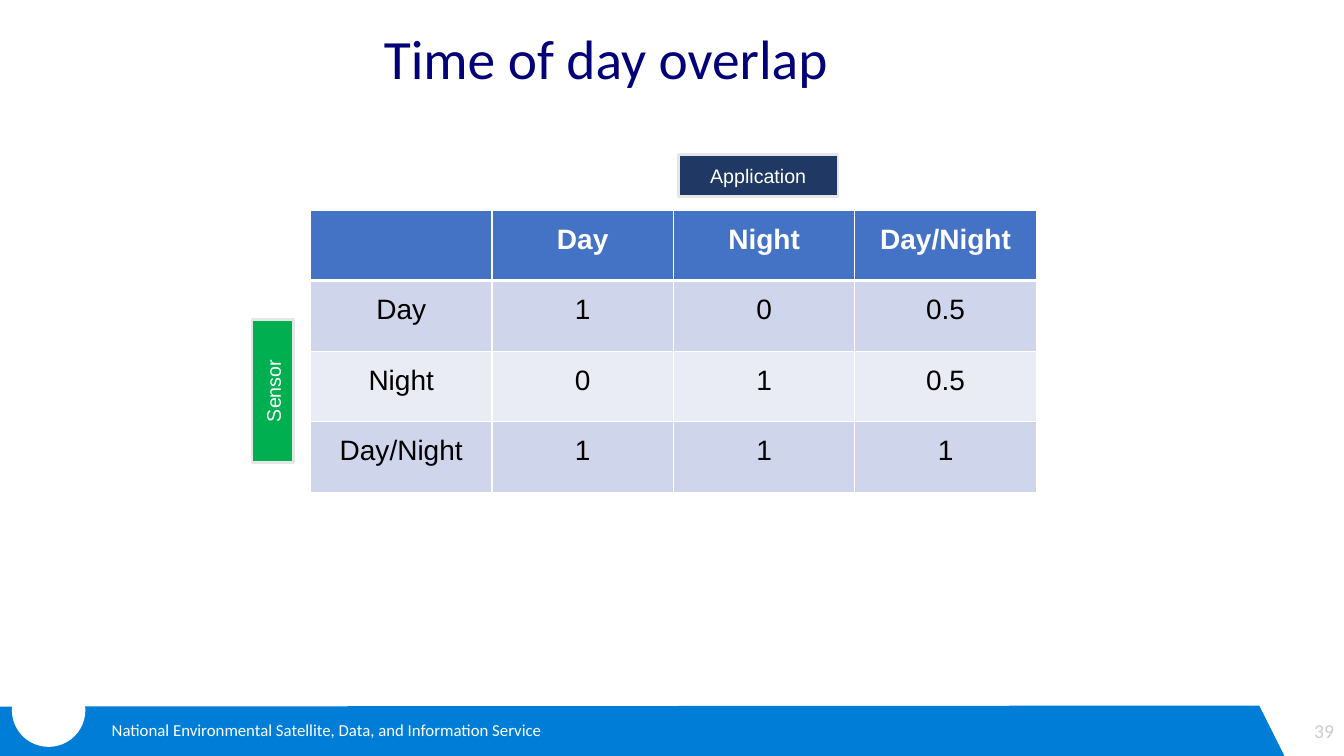
from pptx import Presentation
from pptx.dml.color import RGBColor
from pptx.enum.shapes import MSO_SHAPE
from pptx.enum.text import MSO_ANCHOR, PP_ALIGN
from pptx.oxml import parse_xml
from pptx.oxml.ns import nsdecls
from pptx.util import Pt

LEFT, CENTER, RIGHT = PP_ALIGN.LEFT, PP_ALIGN.CENTER, PP_ALIGN.RIGHT
TOP, MIDDLE = MSO_ANCHOR.TOP, MSO_ANCHOR.MIDDLE
RECT, OVAL = MSO_SHAPE.RECTANGLE, MSO_SHAPE.OVAL

COLORS = {
    "white": "FFFFFF", "black": "000000", "title": "010078",
    "footer": "007DD6", "number": "CCCCCC", "edge": "E7E6E6",
    "head": "4472C4", "odd": "CFD5EA", "even": "E9EBF5",
    "sensor": "00B050", "app": "203864",
}


def color(name):
    return RGBColor.from_string(COLORS[name])


def write(frame, text, font, size, tint, align=CENTER, anchor=MIDDLE):
    """Put one formatted line of text in a frame."""
    frame.text = text
    frame.word_wrap = True
    frame.vertical_anchor = anchor
    para = frame.paragraphs[0]
    para.alignment = align
    para.font.name = font
    para.font.size = Pt(size)
    para.font.color.rgb = color(tint)
    return para


prs = Presentation()
prs.slide_width, prs.slide_height = Pt(960), Pt(540)
slide = prs.slides.add_slide(prs.slide_layouts[5])
shapes = slide.shapes

# Footer band with its round badge
pen = shapes.build_freeform(Pt(0), Pt(504.7))
pen.add_line_segments([(Pt(x), Pt(y)) for x, y in
                       [(899.5, 504), (917.5, 540), (0, 540)]])
band = pen.convert_to_shape()
badge = shapes.add_shape(OVAL, Pt(8.5), Pt(481), Pt(52.5), Pt(52.5))
for shape, fill in [(band, "footer"), (badge, "white")]:
    shape.shadow.inherit = False
    shape.fill.solid()
    shape.fill.fore_color.rgb = color(fill)
    shape.line.fill.background()

agency = shapes.add_textbox(Pt(72.7), Pt(510.5), Pt(603), Pt(22))
write(agency.text_frame,
      "National Environmental Satellite, Data, and Information Service",
      "Calibri", 12, "white", LEFT, TOP)
number = shapes.add_textbox(Pt(895), Pt(507.6), Pt(65), Pt(28.8))
write(number.text_frame, "39", "Calibri", 14, "number", RIGHT)

# Title
title = shapes.title
title.left, title.top = Pt(79.2), Pt(21.6)
title.width, title.height = Pt(707), Pt(44.6)
para = write(title.text_frame, "Time of day overlap", "Calibri", 39.6, "title")
para.line_spacing = 0.9

# Overlap table
ROWS = [
    ["", "Day", "Night", "Day/Night"],
    ["Day", "1", "0", "0.5"],
    ["Night", "0", "1", "0.5"],
    ["Day/Night", "1", "1", "1"],
]
FILLS = ["head", "odd", "even", "odd"]
grid = shapes.add_table(4, 4, Pt(221.8), Pt(150), Pt(518.4), Pt(201.6)).table
for r, row in enumerate(ROWS):
    grid.rows[r].height = Pt(50.4)
    grid.columns[r].width = Pt(129.6)
    for c, text in enumerate(row):
        cell = grid.cell(r, c)
        cell.margin_left = cell.margin_right = Pt(5)
        cell.margin_top = cell.margin_bottom = Pt(0)
        cell.vertical_anchor = MIDDLE
        para = write(cell.text_frame, text, "Arial", 20,
                     "black" if r else "white")
        para.font.bold = r == 0
        para.line_spacing = Pt(14)
        props = cell._tc.get_or_add_tcPr()
        for side in "LRTB":
            thick = (r, side) in [(0, "B"), (1, "T")]
            props.append(parse_xml(
                f'<a:ln{side} {nsdecls("a")} w="{Pt(3 if thick else 1)}">'
                f'<a:solidFill><a:srgbClr val="{COLORS["white"]}"/>'
                f'</a:solidFill></a:ln{side}>'))
        cell.fill.solid()
        cell.fill.fore_color.rgb = color(FILLS[r])

# Axis labels
for text, x, y, width, turn, fill in [
        ("Sensor", 144, 264.2, 102, 270, "sensor"),
        ("Application", 484.6, 110.2, 114, 0, "app")]:
    label = shapes.add_shape(RECT, Pt(x), Pt(y), Pt(width), Pt(30))
    label.rotation = turn
    label.shadow.inherit = False
    label.fill.solid()
    label.fill.fore_color.rgb = color(fill)
    label.line.color.rgb = color("edge")
    label.line.width = Pt(2)
    write(label.text_frame, text, "Arial", 14, "white")

prs.save("out.pptx")
